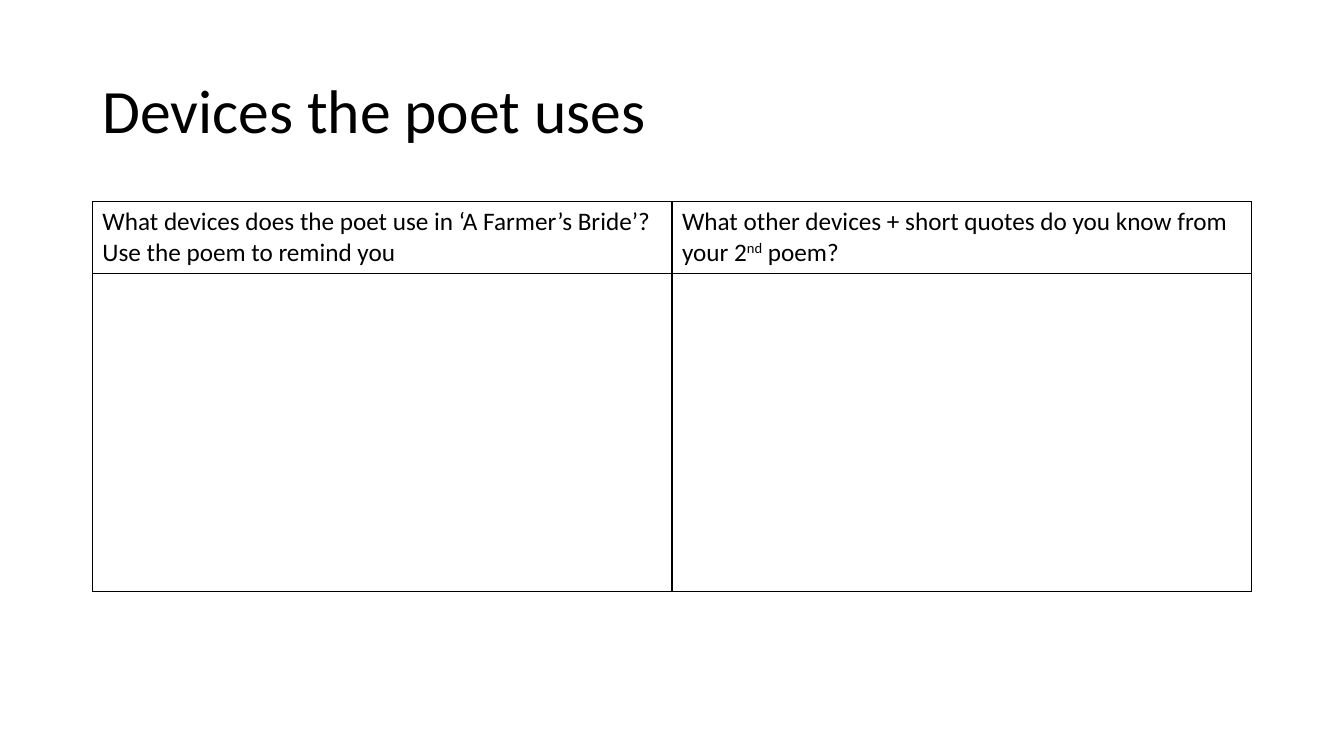
from lxml.etree import SubElement
from pptx import Presentation
from pptx.dml.color import RGBColor
from pptx.enum.text import MSO_ANCHOR, PP_ALIGN
from pptx.oxml import parse_xml
from pptx.oxml.ns import nsdecls
from pptx.util import Pt

BLACK = RGBColor(0, 0, 0)
FONT = "Calibri"
LEFT, WIDTH = 66, 828
HEADS = [
    [["What devices does the poet use in ‘A Farmer’s Bride’?"],
     ["Use the poem to remind you"]],
    [["What other devices + short quotes do you know from your 2",
      ("nd", 30), " poem?"]],
]
ROWS = [50.7, 227.2]


def add_run(para, text, size, base=0):
    run = para.add_run()
    run.text = text
    run.font.name = FONT
    run.font.size = Pt(size)
    run.font.bold = False
    run.font.color.rgb = BLACK
    if base:
        run.font._element.set("baseline", str(base * 1000))


def set_title(slide, text):
    title = slide.shapes.title
    title.left, title.top = Pt(LEFT), Pt(28.75)
    title.width, title.height = Pt(WIDTH), Pt(104.4)
    frame = title.text_frame
    frame.word_wrap = True
    frame.vertical_anchor = MSO_ANCHOR.MIDDLE
    para = frame.paragraphs[0]
    para.alignment = PP_ALIGN.LEFT
    para.line_spacing = 0.9
    add_run(para, text, 44)


def set_edges(cell):
    props = cell._tc.get_or_add_tcPr()
    for pos, side in enumerate(("lnL", "lnR", "lnT", "lnB")):
        line = parse_xml(f'<a:{side} {nsdecls("a")} w="{Pt(1)}"/>')
        fill = SubElement(line, line.tag.replace(side, "solidFill"))
        SubElement(fill, line.tag.replace(side, "srgbClr"), val=str(BLACK))
        props.insert(pos, line)


def fill_cell(cell, lines):
    frame = cell.text_frame
    for num, line in enumerate(lines):
        para = frame.add_paragraph() if num else frame.paragraphs[0]
        for part in line:
            text, base = (part, 0) if isinstance(part, str) else part
            add_run(para, text, 18, base)


def add_grid(slide):
    frame = slide.shapes.add_table(
        len(ROWS), len(HEADS), Pt(LEFT), Pt(144), Pt(WIDTH), Pt(sum(ROWS)))
    table = frame.table
    table.first_row = table.horz_banding = False
    for row, height in zip(table.rows, ROWS):
        row.height = Pt(height)
    for cell in table.iter_cells():
        cell.fill.background()
        set_edges(cell)
    for col, lines in enumerate(HEADS):
        fill_cell(table.cell(0, col), lines)


def main():
    deck = Presentation()
    deck.slide_width, deck.slide_height = Pt(960), Pt(540)
    slide = deck.slides.add_slide(deck.slide_layouts[5])
    set_title(slide, "Devices the poet uses")
    add_grid(slide)
    deck.save("out.pptx")


if __name__ == "__main__":
    main()
